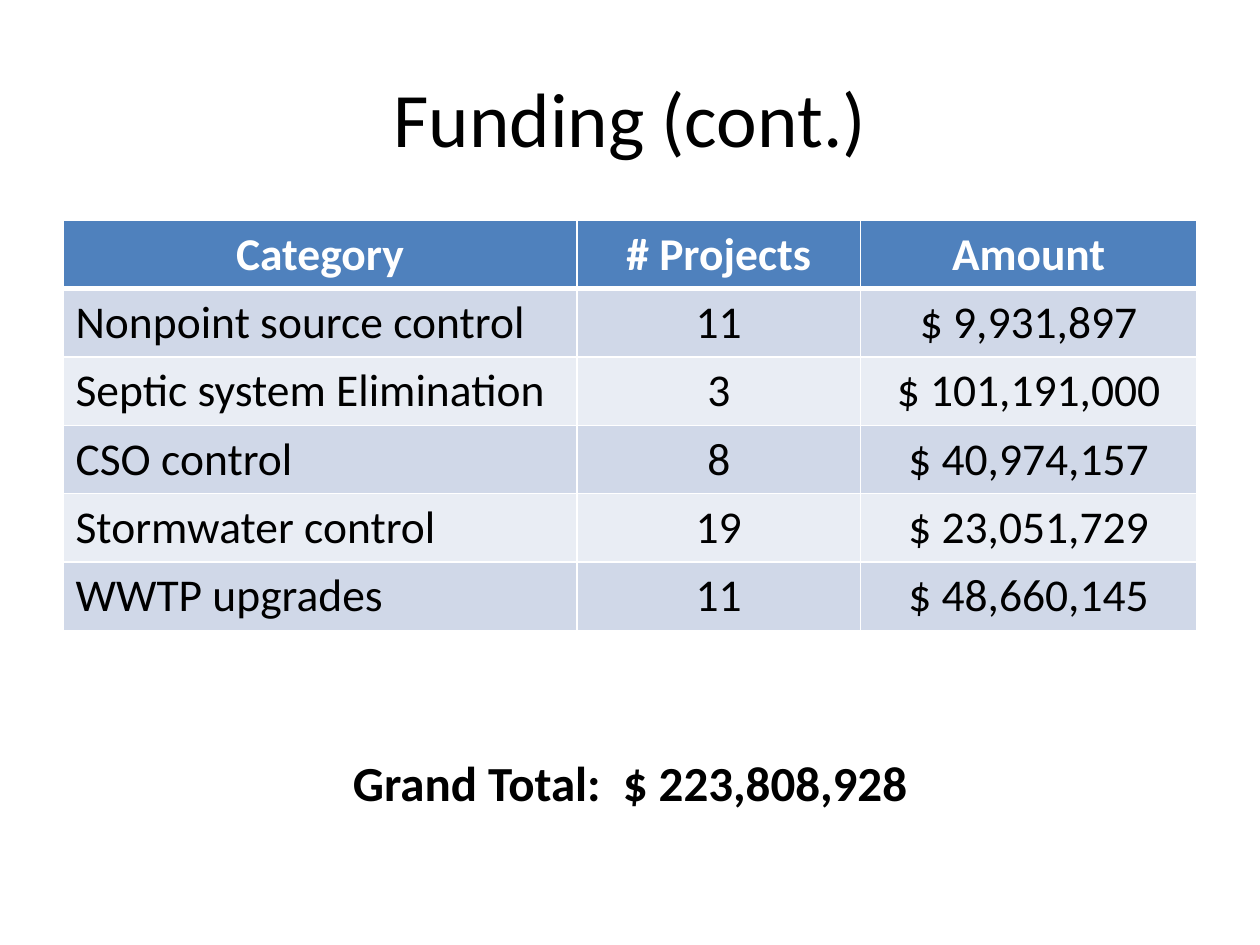
from pptx import Presentation
from pptx.dml.color import RGBColor
from pptx.enum.text import MSO_ANCHOR, PP_ALIGN
from pptx.oxml import parse_xml
from pptx.oxml.ns import nsdecls
from pptx.util import Pt


def write(frame, text, size, color="000000", bold=False, align=PP_ALIGN.CENTER):
    """Fill a text frame with one formatted paragraph."""
    para = frame.paragraphs[0]
    para.alignment = align
    span = para.add_run()
    span.text = text
    span.font.color.rgb = RGBColor.from_string(color)
    for name, value in {"name": "Calibri", "size": Pt(size), "bold": bold}.items():
        setattr(span.font, name, value)


def add_border(cell, side, width):
    """Draw a white line on one side (L, R, T or B) of a cell."""
    cell._tc.get_or_add_tcPr().append(parse_xml(
        f'<a:ln{side} {nsdecls("a")} w="{Pt(width)}"><a:solidFill>'
        f'<a:srgbClr val="FFFFFF"/></a:solidFill></a:ln{side}>'))


deck = Presentation()
deck.slide_width, deck.slide_height = Pt(720), Pt(540)
page = deck.slides.add_slide(deck.slide_layouts[5])

title = page.shapes.title
for name, value in {"left": 36, "top": 21.6, "width": 648, "height": 90}.items():
    setattr(title, name, Pt(value))
title.text_frame.vertical_anchor = MSO_ANCHOR.MIDDLE
write(title.text_frame, "Funding (cont.)", 44)

funding = [
    ("Category", "# Projects", "Amount"),
    ("Nonpoint source control", "11", "$ 9,931,897"),
    ("Septic system Elimination", "3", "$ 101,191,000"),
    ("CSO control", "8", "$ 40,974,157"),
    ("Stormwater control", "19", "$ 23,051,729"),
    ("WWTP upgrades", "11", "$ 48,660,145"),
]
table = page.shapes.add_table(
    len(funding), 3, Pt(36), Pt(126), Pt(648), Pt(230.4)).table
for column, width in zip(table.columns, (293.76, 162, 192.24)):
    column.width = Pt(width)

for row, values in enumerate(funding):
    header = row == 0
    fill = "4F81BD" if header else ("E9EDF4", "D0D8E8")[row % 2]
    for col, text in enumerate(values):
        cell = table.cell(row, col)
        thick_side = {0: "B", 1: "T"}.get(row)
        for side in "LRTB":
            add_border(cell, side, 3 if side == thick_side else 1)
        cell.fill.solid()
        cell.fill.fore_color.rgb = RGBColor.from_string(fill)
        align = PP_ALIGN.CENTER if header or col else PP_ALIGN.LEFT
        write(cell.text_frame, text, 26, "FFFFFF" if header else "000000", header, align)

total = page.shapes.add_textbox(Pt(128.88), Pt(426.24), Pt(462.24), Pt(41.04))
total.text_frame.word_wrap = True
write(total.text_frame, "Grand Total:  $ 223,808,928", 28, bold=True)

deck.save("out.pptx")
